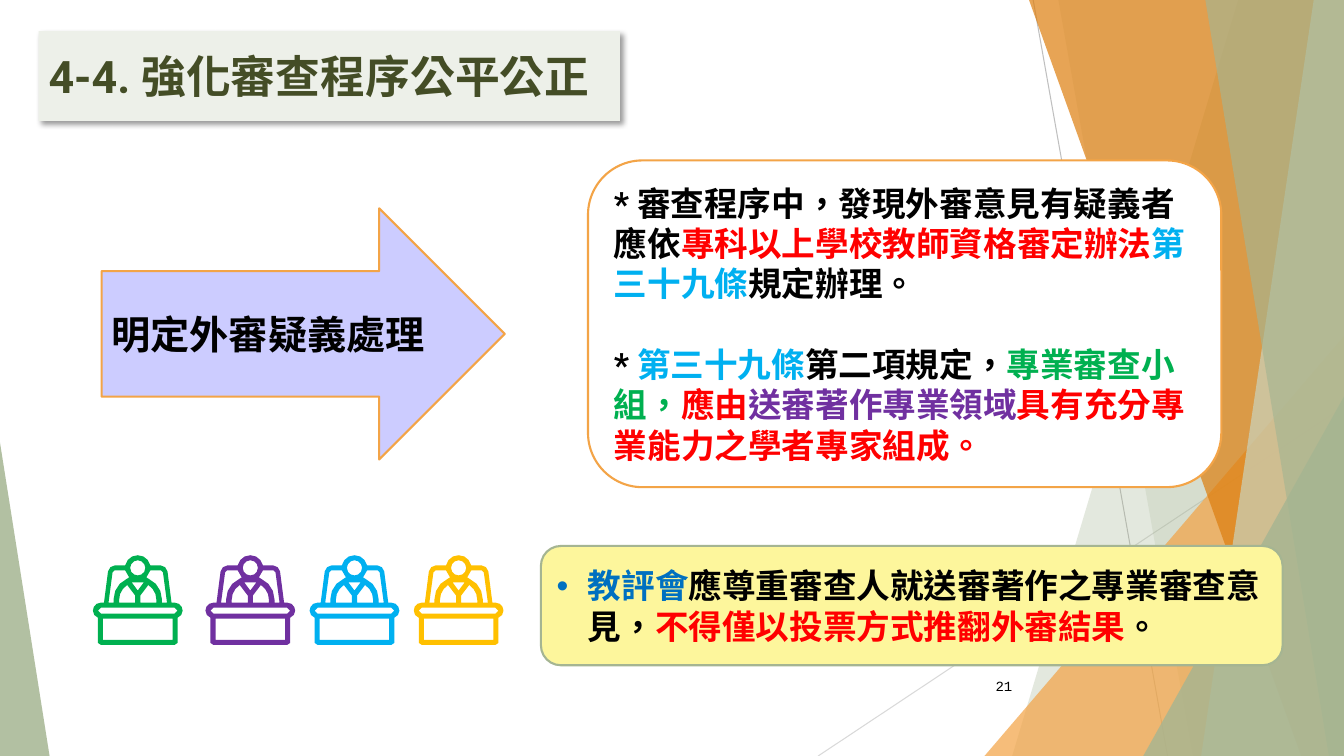
import math
from dataclasses import dataclass
from typing import Optional, Union

import lxml.etree
import pptx
import pptx.dml.color
import pptx.enum.lang
import pptx.enum.shapes
import pptx.enum.text
import pptx.oxml.ns
import pptx.shapes.autoshape
import pptx.shapes.shapetree
import pptx.text.text
import pptx.util

Kind = pptx.enum.shapes.MSO_SHAPE
Align = pptx.enum.text.PP_ALIGN
Tree = pptx.shapes.shapetree.SlideShapes
Shape = pptx.shapes.autoshape.Shape
Point = tuple[float, float]
Step = tuple[float, ...]
qn = pptx.oxml.ns.qn

WIDE, HIGH = pptx.util.Inches(13.333), pptx.util.Inches(7.5)
COLS, ROWS = 160, 90


@dataclass(frozen=True)
class Theme:
    black: str = "000000"
    white: str = "FFFFFF"
    red: str = "FF0000"
    sky: str = "00B0F0"
    blue: str = "0070C0"
    green: str = "00B050"
    plum: str = "7030A0"
    gold: str = "FFC000"
    olive: str = "444D26"
    mist: str = "EDF0E9"
    lilac: str = "CCCCFF"
    lemon: str = "FDF69C"
    sage: str = "A5B592"
    pale: str = "C9D3BE"
    amber: str = "F3A447"
    rust: str = "DD7E0E"
    gray: str = "BFBFBF"
    light: str = "D9D9D9"
    title: int = 32
    label: int = 28
    body: int = 24
    small: int = 10
    latin: str = "Roboto"
    east: str = "Noto Sans CJK TC"
    bold: str = "Noto Sans CJK JP"
    mono: str = "Courier New"


T = Theme()


@dataclass(frozen=True)
class Ray:
    start: Point
    end: Point
    tint: str


@dataclass(frozen=True)
class Band:
    top: float
    foot: float
    tint: str
    share: int


@dataclass(frozen=True)
class Wedge:
    left: float
    top: float
    wide: float
    peak: float
    tint: str
    share: int


@dataclass(frozen=True)
class Run:
    text: str
    tint: str = T.black


@dataclass(frozen=True)
class Box:
    kind: Kind
    area: tuple[float, float, float, float]
    fill: str
    edge: Optional[str]
    size: int
    paras: list[list[Run]]
    latin: str = T.latin
    east: str = T.east
    shade: bool = False
    dot: bool = False


RAYS = [Ray((123, 0), (139, 90), T.gray), Ray((160, 48.4), (97.4, 90), T.light)]
DECOR: list[Union[Band, Wedge]] = [
    Band(147.4, 120.5, T.sage, 30),
    Band(126, 142, T.sage, 20),
    Wedge(117.2, 40, 42.8, 1, T.amber, 72),
    Band(122.5, 154.9, T.rust, 70),
    Band(156.4, 143, T.pale, 70),
    Band(143.5, 158.2, T.sage, 65),
    Wedge(136.1, 47.2, 23.9, 1, T.sage, 80),
    Wedge(0, 52.7, 5.9, 0, T.sage, 85),
]
BOXES = [
    Box(Kind.RECTANGLE, (4.6, 3.7, 69.2, 10.7), T.mist, None, T.title,
        [[Run("4-4.強化審查程序公平公正", T.olive)]], shade=True),
    Box(Kind.RIGHT_ARROW, (12.1, 24.8, 48, 29.9), T.lilac, T.amber, T.label,
        [[Run("明定外審疑義處理")]], T.bold, T.bold),
    Box(Kind.ROUNDED_RECTANGLE, (70, 19.1, 75.4, 38.9), T.white, T.amber, T.body, [
        [Run("*審查程序中，發現外審意見有疑義者應依"),
         Run("專科以上學校教師資格審定辦法", T.red),
         Run("第三十九條", T.sky), Run("規定辦理。")],
        [Run("*"), Run("第三十九條", T.sky), Run("第二項規定，"),
         Run("專業審查小組，", T.green), Run("應由", T.red),
         Run("送審著作專業領域", T.plum),
         Run("具有充分專業能力之學者專家組成。", T.red)],
    ]),
    Box(Kind.ROUNDED_RECTANGLE, (64.4, 65, 88.3, 14.2), T.lemon, T.sage, T.body, [
        [Run("教評會", T.blue), Run("應尊重審查人就送審著作之專業審查意見，"),
         Run("不得僅以投票方式推翻外審結果", T.red), Run("。")],
    ], dot=True),
]
ICONS = [(16.4, T.green)] + [
    (29.8 + 12.4 * i, tint) for i, tint in enumerate((T.plum, T.sky, T.gold))]
ICON_TOP = 66.1

HALVES: list[list[Step]] = [
    [(0, 0), (6, 0, 11, 4, 12.5, 10), (22.5, 10), (26, 10, 29, 13, 29.5, 16),
     (33.5, 47), (36.5, 47), (41.5, 47, 44.5, 51, 44.5, 55),
     (44.5, 58, 42.5, 61, 39.5, 62), (39.5, 87), (36.5, 89)],
    [(0, 5), (4, 5, 7.5, 8.5, 7.5, 12.5), (7.5, 17, 4, 20, 0, 20)],
    [(6, 27), (0, 35)],
    [(36.5, 52), (39.5, 55), (36.5, 58)],
    [(34.5, 63), (34.5, 84)],
]
SIDES: list[list[Step]] = [
    [(12.5, 15), (8.5, 22), (11, 23.5), (19, 27, 24, 35, 24, 44), (24, 47),
     (29, 47), (25, 17), (23, 15)],
    [(10.5, 29.5), (2.5, 40), (2.5, 47), (18.5, 47), (18.5, 44.5),
     (18.5, 38, 15.5, 33, 10.5, 29.5)],
]


def col(n: float) -> int:
    return round(WIDE * n / COLS)


def row(n: float) -> int:
    return round(HIGH * n / ROWS)


def rgb(tint: str) -> pptx.dml.color.RGBColor:
    return pptx.dml.color.RGBColor.from_string(tint)


def paint(shape: Shape, tint: str, edge: Optional[str] = None, share: int = 100) -> None:
    shape.shadow.inherit = False
    shape.fill.solid()
    shape.fill.fore_color.rgb = rgb(tint)
    if share < 100:
        node = shape.element.spPr.find(".//" + qn("a:srgbClr"))
        lxml.etree.SubElement(node, qn("a:alpha"), val=str(share * 1000))
    if edge:
        shape.line.color.rgb = rgb(edge)
        shape.line.width = pptx.util.Pt(1.5)
    else:
        shape.line.fill.background()


def outline(tree: Tree, loops: list[list[tuple[int, int]]]) -> Shape:
    pen = tree.build_freeform(*loops[0][0], scale=1.0)
    pen.add_line_segments(loops[0][1:], close=True)
    for loop in loops[1:]:
        pen.move_to(*loop[0])
        pen.add_line_segments(loop[1:], close=True)
    return pen.convert_to_shape()


def draw_ray(tree: Tree, ray: Ray) -> None:
    (x, y), (u, v) = ray.start, ray.end
    line = tree.add_connector(pptx.enum.shapes.MSO_CONNECTOR.STRAIGHT,
                              col(x), row(y), col(u), row(v))
    line.line.color.rgb = rgb(ray.tint)
    line.line.width = pptx.util.Pt(0.75)
    lxml.etree.SubElement(line.element.spPr, qn("a:effectLst"))


def draw_decor(tree: Tree, item: Union[Band, Wedge]) -> None:
    if isinstance(item, Band):
        shape = outline(tree, [[(col(item.top), 0), (WIDE, 0), (WIDE, HIGH),
                                (col(item.foot), HIGH)]])
    else:
        shape = tree.add_shape(Kind.ISOSCELES_TRIANGLE, col(item.left), row(item.top),
                               col(item.wide), row(ROWS - item.top))
        shape.adjustments[0] = item.peak
    paint(shape, item.tint, share=item.share)


def add_run(para: pptx.text.text._Paragraph, run: Run, size: int, latin: str,
            east: str, bold: bool = True) -> None:
    piece = para.add_run()
    piece.text = run.text
    font = piece.font
    font.size, font.bold, font.name = pptx.util.Pt(size), bold, latin
    font.color.rgb = rgb(run.tint)
    font.language_id = pptx.enum.lang.MSO_LANGUAGE_ID.TRADITIONAL_CHINESE
    mark = lxml.etree.Element(qn("a:ea"), typeface=east)
    font._element.find(qn("a:latin")).addnext(mark)


def draw_box(tree: Tree, box: Box) -> None:
    x, y, w, h = box.area
    shape = tree.add_shape(box.kind, col(x), row(y), col(w), row(h))
    paint(shape, box.fill, box.edge)
    if box.shade:
        glow = lxml.etree.SubElement(
            shape.element.spPr.find(qn("a:effectLst")), qn("a:outerShdw"),
            blurRad=str(pptx.util.Pt(4)), dist=str(pptx.util.Pt(3)),
            dir=str(45 * 60000), algn="tl", rotWithShape="0")
        tone = lxml.etree.SubElement(glow, qn("a:srgbClr"), val=T.black)
        lxml.etree.SubElement(tone, qn("a:alpha"), val="40000")
    frame = shape.text_frame
    frame.word_wrap = True
    frame.vertical_anchor = pptx.enum.text.MSO_ANCHOR.MIDDLE
    for i, runs in enumerate(box.paras):
        para = frame.add_paragraph() if i else frame.paragraphs[0]
        para.alignment = Align.LEFT
        if i:
            para.space_before = pptx.util.Pt(28.8)
        if box.dot:
            props = para._p.get_or_add_pPr()
            inset = pptx.util.Inches(0.31)
            props.set("marL", str(inset))
            props.set("indent", str(-inset))
            lxml.etree.SubElement(props, qn("a:buFont"), typeface="Arial")
            lxml.etree.SubElement(props, qn("a:buChar"), char="•")
        for run in runs:
            add_run(para, run, box.size, box.latin, box.east)


def draw_page(tree: Tree) -> None:
    frame = tree.add_textbox(col(112.7), row(79.3), col(9), row(4.8)).text_frame
    frame.word_wrap = True
    frame.vertical_anchor = pptx.enum.text.MSO_ANCHOR.MIDDLE
    para = frame.paragraphs[0]
    para.alignment = Align.RIGHT
    add_run(para, Run("21"), T.small, T.mono, T.east, False)


def trace(steps: list[Step]) -> list[Point]:
    pts: list[Point] = [(steps[0][0], steps[0][1])]
    for step in steps[1:]:
        if len(step) == 2:
            pts.append((step[0], step[1]))
            continue
        knots = [pts[-1], step[:2], step[2:4], step[4:]]
        count = min(3, math.ceil(math.dist(knots[0], knots[3]) / 5))
        for t in (k / count for k in range(1, count + 1)):
            mix = ((1 - t) ** 3, 3 * t * (1 - t) ** 2, 3 * t * t * (1 - t), t ** 3)
            pts.append((sum(m * k[0] for m, k in zip(mix, knots)),
                        sum(m * k[1] for m, k in zip(mix, knots))))
    return pts


def flip(pts: list[Point]) -> list[Point]:
    return [(-x, y) for x, y in reversed(pts) if x]


def draw_icon(tree: Tree, mid: float, tint: str) -> None:
    loops = [half + flip(half) for half in map(trace, HALVES)]
    for side in map(trace, SIDES):
        loops += [side, flip(side)]
    unit = pptx.util.Inches(0.01)
    shape = outline(tree, [[(round(col(mid) + x * unit), round(row(ICON_TOP) + y * unit))
                            for x, y in loop] for loop in loops])
    paint(shape, tint)


def main() -> None:
    deck = pptx.Presentation()
    deck.slide_width, deck.slide_height = WIDE, HIGH
    tree = deck.slides.add_slide(deck.slide_layouts[6]).shapes
    for ray in RAYS:
        draw_ray(tree, ray)
    for item in DECOR:
        draw_decor(tree, item)
    draw_page(tree)
    for box in BOXES:
        draw_box(tree, box)
    for mid, tint in ICONS:
        draw_icon(tree, mid, tint)
    deck.save("out.pptx")


if __name__ == "__main__":
    main()
